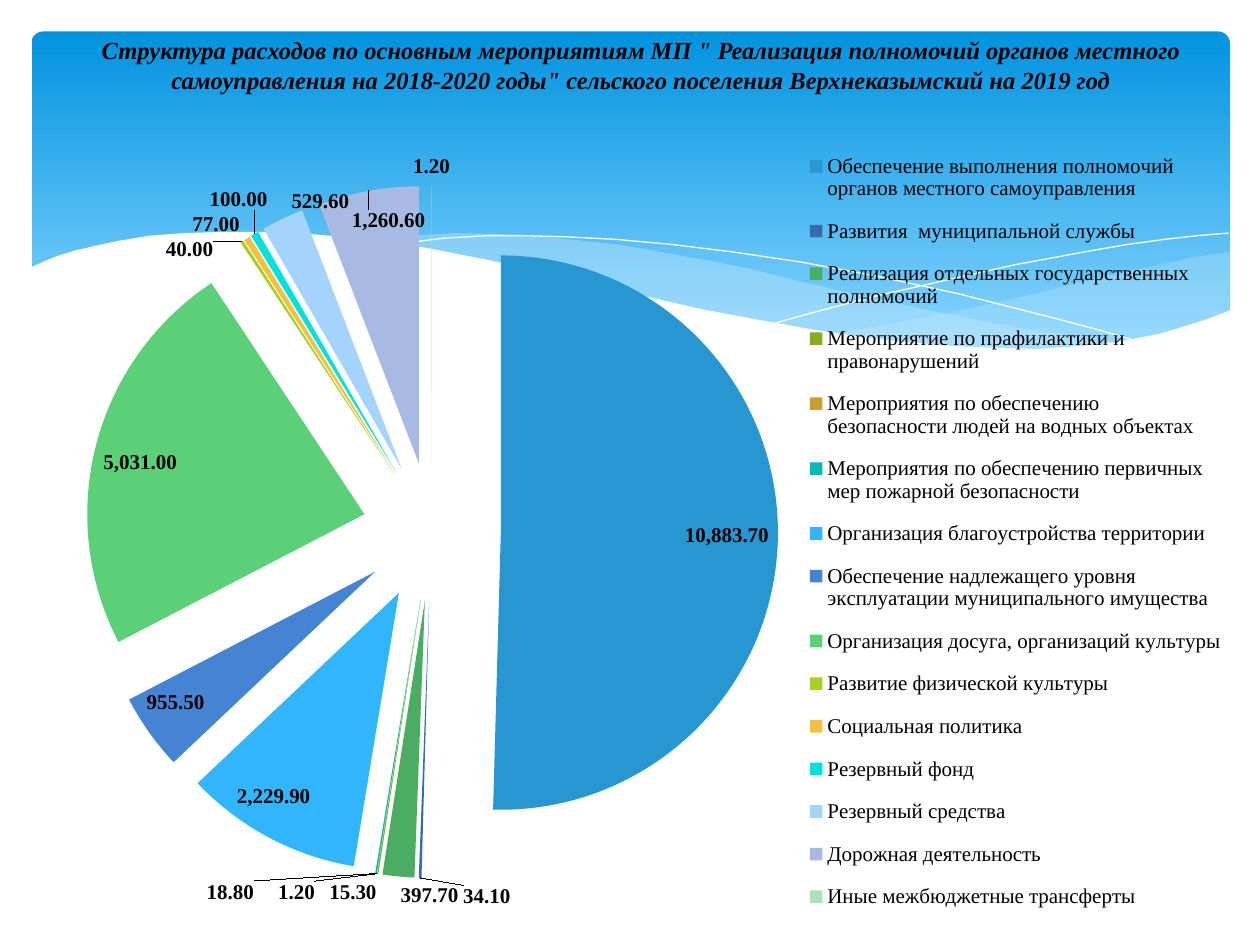
from lxml.etree import SubElement
from pptx import Presentation
from pptx.chart.data import CategoryChartData
from pptx.dml.color import RGBColor
from pptx.enum.chart import XL_CHART_TYPE, XL_LABEL_POSITION, XL_LEGEND_POSITION
from pptx.enum.shapes import MSO_SHAPE
from pptx.enum.text import MSO_ANCHOR, PP_ALIGN
from pptx.oxml import parse_xml
from pptx.oxml.ns import nsdecls, qn
from pptx.util import Inches, Pt

THEME = {
    "title_font": "Times New Roman", "chart_font": "Calibri",
    "title_size": 14, "label_size": 12, "chart_size": 10,
    "text": "000000", "white": "FFFFFF", "mist": "C6E7FC",
    "sky_top": "0293E0", "sky_bottom": "83D3FE",
}

TITLE = ('Структура расходов по основным мероприятиям МП " Реализация полномочий органов местного '
         'самоуправления на 2018-2020 годы" сельского поселения Верхнеказымский на 2019 год')

EXPENSES = [
    ("Обеспечение выполнения полномочий органов местного самоуправления", 10883.7, "2896D0"),
    ("Развития  муниципальной службы", 34.1, "396CAE"),
    ("Реализация отдельных государственных полномочий", 397.7, "4BAC63"),
    ("Мероприятие по прафилактики и правонарушений", 15.3, "88AC20"),
    ("Мероприятия по обеспечению безопасности людей на водных объектах", 1.2, "CA9E34"),
    ("Мероприятия по обеспечению первичных мер пожарной безопасности", 18.8, "04B9B5"),
    ("Организация благоустройства территории", 2229.9, "31B6FD"),
    ("Обеспечение надлежащего уровня эксплуатации муниципального имущества", 955.5, "4584D3"),
    ("Организация досуга, организаций культуры", 5031, "5BD078"),
    ("Развитие физической культуры", 40, "A5D028"),
    ("Социальная политика", 77, "F5C040"),
    ("Резервный фонд", 100, "05E0DB"),
    ("Резервный средства", 529.6, "A4D3FE"),
    ("Дорожная деятельность", 1260.6, "A8BAE3"),
    ("Иные межбюджетные трансферты", 1.2, "ABE3B6"),
]

CHART_BOX = (0.28, 1.07, 9.53, 6.3)
PIE_BOX = (0.38, 0.4, 5.53, 5.5)
LEGEND_BOX = (6.24, 0, 3.27, 6.3)

WAVES = [
    {"fill": "mist", "opacity": 29, "points": [
        (975, 200), (948, 204), (921, 210), (891, 216), (861, 223), (805, 237), (753, 248), (706, 257),
        (661, 265), (691, 269), (719, 272), (745, 275), (769, 277), (803, 278), (844, 277), (872, 274),
        (897, 270), (921, 265), (942, 259), (963, 252), (976, 247), (976, 200)]},
    {"fill": "mist", "opacity": 40, "points": [
        (893, 273), (866, 269), (807, 260), (741, 247), (668, 231), (629, 222), (598, 214), (569, 208),
        (541, 203), (514, 198), (489, 194), (442, 189), (399, 186), (361, 185), (328, 187), (286, 191),
        (323, 196), (362, 203), (404, 211), (449, 222), (491, 232), (530, 240), (566, 248), (601, 255),
        (634, 261), (665, 266), (695, 270), (722, 274), (748, 276), (785, 278), (828, 278), (867, 276),
        (893, 273)]},
    {"line": "white", "points": [
        (309, 195), (328, 192), (353, 189), (387, 187), (416, 187), (450, 188), (489, 190), (533, 194),
        (582, 200), (636, 208), (695, 219), (760, 233), (831, 251), (869, 261), (907, 272)]},
    {"line": "white", "points": [
        (613, 257), (653, 246), (695, 235), (748, 223), (806, 210), (866, 199), (895, 194), (924, 190),
        (951, 187), (975, 185)]},
    {"fill": "white", "points": [
        (977, 246), (959, 253), (940, 259), (920, 265), (899, 269), (875, 273), (850, 275), (823, 277),
        (793, 276), (761, 275), (726, 272), (688, 268), (648, 262), (603, 254), (555, 245), (503, 233),
        (447, 220), (391, 207), (340, 197), (292, 190), (250, 186), (211, 184), (177, 184), (146, 185),
        (119, 187), (95, 191), (76, 195), (59, 199), (46, 203), (36, 207), (23, 213), (23, 329),
        (977, 329)]},
]


def color(name):
    return RGBColor.from_string(THEME.get(name, name))


def format_font(font, face, size, bold=False, italic=False):
    font.name, font.size = face, Pt(size)
    font.bold, font.italic = bold, italic
    font.color.rgb = color("text")


def write_text(frame, text, align=PP_ALIGN.CENTER, **font_format):
    paragraph = frame.paragraphs[0]
    paragraph.alignment = align
    run = paragraph.add_run()
    run.text = text
    format_font(run.font, **font_format)


def add_sky(slide):
    shape = slide.shapes.add_shape(MSO_SHAPE.ROUNDED_RECTANGLE, Inches(0.25), Inches(0.25),
                                   Inches(9.51), Inches(2.7))
    shape.adjustments[0] = 0.034
    shape.shadow.inherit = False
    shape.line.fill.background()
    shape.fill.gradient()
    shape.fill.gradient_angle = 270
    for stop, name, position in zip(shape.fill.gradient_stops, ("sky_top", "sky_bottom"), (0, 0.9)):
        stop.color.rgb = color(name)
        stop.position = position


def add_wave(slide, points, fill=None, line=None, opacity=100):
    builder = slide.shapes.build_freeform(*points[0], scale=Inches(0.01))
    builder.add_line_segments(points[1:], close=fill is not None)
    shape = builder.convert_to_shape()
    shape.shadow.inherit = False
    if fill:
        shape.fill.solid()
        shape.fill.fore_color.rgb = color(fill)
        shape.line.fill.background()
        if opacity < 100:
            value = shape.fill._xPr.find(".//" + qn("a:srgbClr"))
            SubElement(value, qn("a:alpha"), val=str(opacity * 1000))
    else:
        shape.fill.background()
        shape.line.color.rgb = color(line)
        shape.line.width = Pt(0)


def set_layout(element, index, box, target=""):
    for layout in element.findall(qn("c:layout")):
        element.remove(layout)
    width, height = CHART_BOX[2:]
    modes = '<c:xMode val="edge"/><c:yMode val="edge"/>'
    values = "".join(f'<c:{key} val="{length / whole:.4f}"/>'
                     for key, length, whole in zip("xywh", box, (width, height) * 2))
    element.insert(index, parse_xml(
        f'<c:layout {nsdecls("c")}><c:manualLayout>{target}{modes}{values}</c:manualLayout></c:layout>'))


def add_expense_chart(slide):
    data = CategoryChartData(number_format="#,##0.00")
    data.categories = [name for name, _, _ in EXPENSES]
    data.add_series("Series 1", [value for _, value, _ in EXPENSES])
    chart = slide.shapes.add_chart(XL_CHART_TYPE.PIE, *map(Inches, CHART_BOX), data).chart
    chart.has_title = False
    format_font(chart.font, THEME["chart_font"], THEME["chart_size"])
    chart.has_legend = True
    chart.legend.position = XL_LEGEND_POSITION.RIGHT
    chart.legend.include_in_layout = False
    format_font(chart.legend.font, THEME["title_font"], THEME["label_size"])

    plot = chart.plots[0]
    plot.vary_by_categories = True
    series = plot.series[0]
    for index, (_, _, fill) in enumerate(EXPENSES):
        point_fill = series.points[index].format.fill
        point_fill.solid()
        point_fill.fore_color.rgb = color(fill)
    series._element.find(qn("c:dPt")).addprevious(
        parse_xml(f'<c:explosion {nsdecls("c")} val="25"/>'))
    labels = series.data_labels
    labels.show_value = True
    labels.number_format, labels.number_format_is_linked = "#,##0.00", False
    labels.position = XL_LABEL_POSITION.BEST_FIT
    format_font(labels.font, THEME["title_font"], THEME["label_size"], bold=True)

    plot_area = chart._chartSpace.find(".//" + qn("c:plotArea"))
    set_layout(plot_area, 0, PIE_BOX, target='<c:layoutTarget val="inner"/>')
    set_layout(chart.legend._element, 1, LEGEND_BOX)


def main():
    presentation = Presentation()
    presentation.slide_width, presentation.slide_height = Inches(10), Inches(7.5)
    slide = presentation.slides.add_slide(presentation.slide_layouts[5])
    add_sky(slide)
    for wave in WAVES:
        add_wave(slide, **wave)
    title = slide.shapes.title
    title.left, title.top, title.width, title.height = map(Inches, (0.59, 0.28, 9, 0.71))
    slide.shapes._spTree.append(title._element)
    title.text_frame.word_wrap = True
    title.text_frame.vertical_anchor = MSO_ANCHOR.TOP
    title.text_frame.margin_top = 0
    write_text(title.text_frame, TITLE, face=THEME["title_font"], size=THEME["title_size"],
               bold=True, italic=True)
    add_expense_chart(slide)
    presentation.save("out.pptx")


if __name__ == "__main__":
    main()
